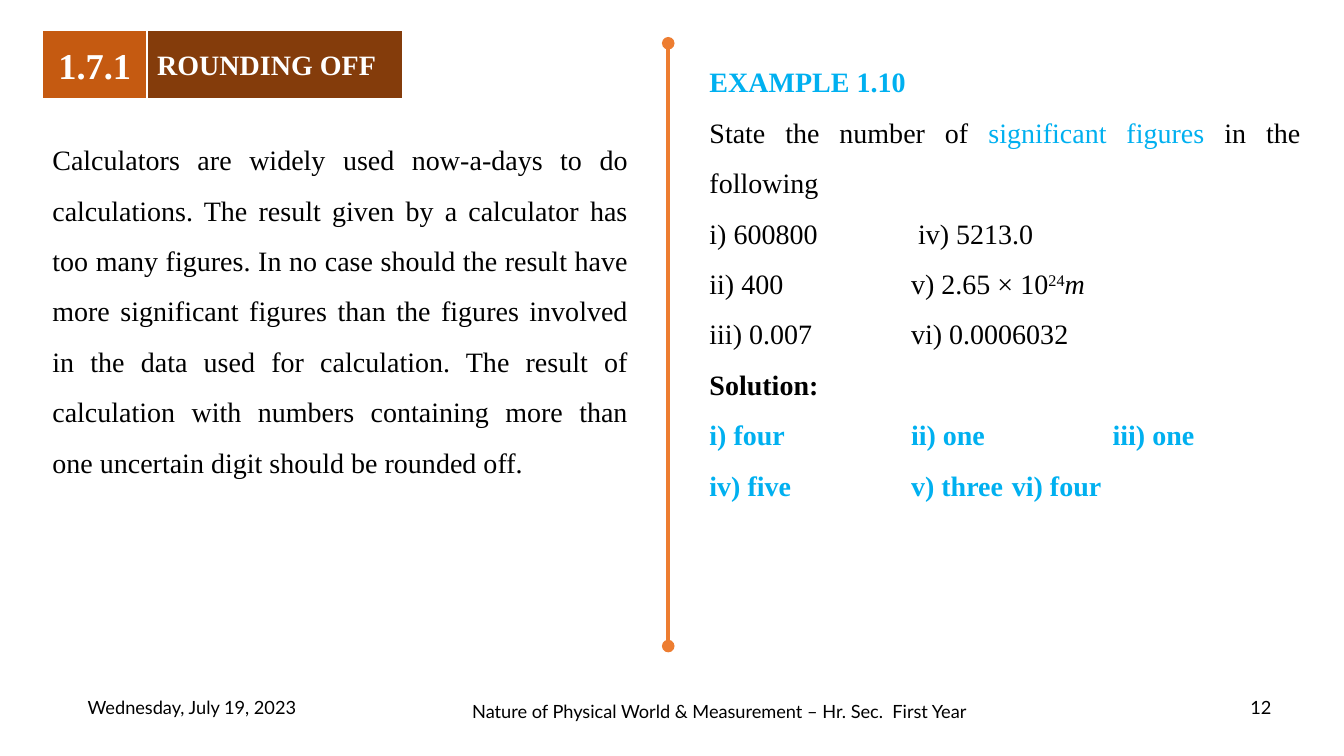
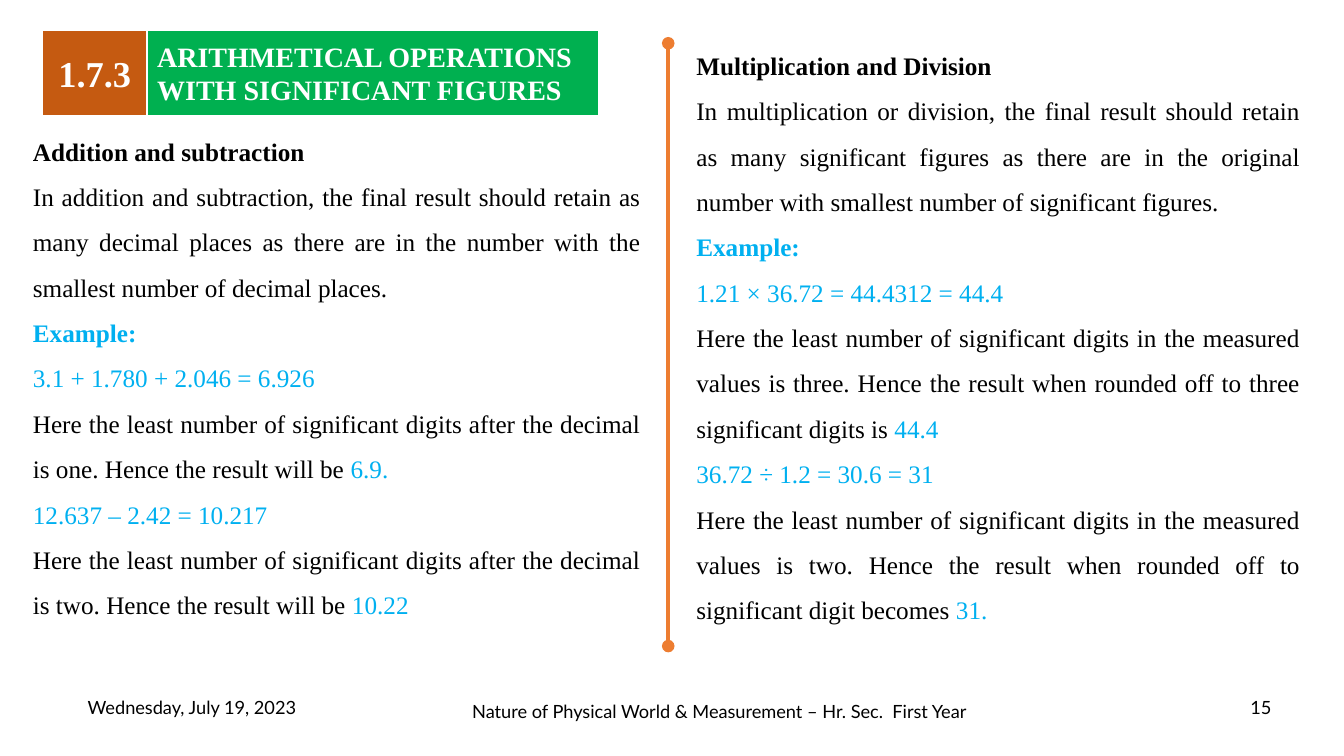
from lxml.etree import SubElement
from pptx import Presentation
from pptx.dml.color import RGBColor
from pptx.enum.shapes import MSO_CONNECTOR, MSO_SHAPE
from pptx.enum.text import MSO_ANCHOR, MSO_AUTO_SIZE, PP_ALIGN
from pptx.oxml.ns import qn
from pptx.util import Cm, Pt

BLACK, WHITE, CYAN = "000000", "FFFFFF", "00B0F0"
ORANGE, RUST, BROWN, GREEN = "ED7D31", "C55A11", "843C0B", "00B050"
SERIF, SANS = "Times New Roman", "Lato"
PLAIN, BOLD, KEY = {}, {"bold": True}, {"color": CYAN}
KEY_BOLD = {"color": CYAN, "bold": True}
WIDE_TABS, CLOSE_TABS = (5.08, 10.16), (5.08, 7.62)

ROUNDING = [
    [("Calculators are widely used now-a-days to do calculations. The result given by a "
      "calculator has too many figures. In no case should the result have more significant "
      "figures than the figures involved in the data used for calculation. The result of "
      "calculation with numbers containing more than one uncertain digit should be "
      "rounded off.", PLAIN)],
]
EXAMPLE = [
    [("EXAMPLE 1.10", KEY_BOLD)],
    [("State the number of ", PLAIN), ("significant figures ", KEY),
     ("in the following", PLAIN)],
    [("i) 600800\t iv) 5213.0", PLAIN)],
    [("ii) 400\tv) 2.65 × 10", PLAIN), ("24", {"raised": 30}), ("m", {"italic": True})],
    [("iii) 0.007\tvi) 0.0006032", PLAIN)],
    [("Solution:", BOLD)],
    [("i) four\tii) one\tiii) one", KEY_BOLD)],
    [("iv) five\tv) three\tvi) four", {**KEY_BOLD, "tabs": CLOSE_TABS})],
]
ADDITION = [
    [("Addition and subtraction", BOLD)],
    [("In addition and subtraction, the final result should retain as many decimal places "
      "as there are in the number with the smallest number of decimal places.", PLAIN)],
    [("Example:", KEY_BOLD)],
    [("3.1 + 1.780 + 2.046 = 6.926", KEY)],
    [("Here the least number of significant digits after the decimal is one. Hence the "
      "result will be ", PLAIN), ("6.9.", KEY)],
    [("12.637 – 2.42 = 10.217", KEY)],
    [("Here the least number of significant digits after the decimal is two. Hence the "
      "result will be ", PLAIN), ("10.22", KEY)],
]
MULTIPLICATION = [
    [("Multiplication and Division", BOLD)],
    [("In multiplication or division, the final result should retain as many significant "
      "figures as there are in the original number with smallest number of significant "
      "figures.", PLAIN)],
    [("Example:", KEY_BOLD)],
    [("1.21 × 36.72 = 44.4312 = 44.4", KEY)],
    [("Here the least number of significant digits in the measured values is three. Hence "
      "the result when rounded off to three significant digits is ", PLAIN), ("44.4", KEY)],
    [("36.72 ÷ 1.2 = 30.6 = 31", KEY)],
    [("Here the least number of significant digits in the measured values is two. Hence "
      "the result when rounded off to significant digit becomes ", PLAIN), ("31.", KEY)],
]


def paint(target, color):
    if hasattr(target, "solid"):
        target.solid()
        target = target.fore_color
    target.rgb = RGBColor.from_string(color)


def write(para, text, font=SERIF, size=20, color=BLACK, bold=False, italic=False,
          raised=0, tabs=None):
    span = para.add_run()
    span.text = text
    span.font.name, span.font.size = font, Pt(size)
    span.font.bold, span.font.italic = bold, italic
    paint(span.font.color, color)
    if raised:
        span._r.get_or_add_rPr().set("baseline", str(raised * 1000))
    if "\t" in text:
        stops = SubElement(para._p.get_or_add_pPr(), qn("a:tabLst"))
        for stop in tabs or WIDE_TABS:
            SubElement(stops, qn("a:tab"), pos=str(Cm(stop)), algn="l")


def add_text_box(page, left, top, width, height):
    box = page.shapes.add_textbox(Cm(left), Cm(top), Cm(width), Cm(height))
    box.text_frame.word_wrap = True
    return box.text_frame


def add_footer(page, number):
    parts = [
        ("Wednesday, July 19, 2023", 1.8, 17.3, 6.07),
        (str(number), 31.24, 17.3, 1.07),
        ("Nature of Physical World & Measurement – Hr. Sec.  First Year", 11.56, 17.4, 13.13),
    ]
    for text, left, top, width in parts:
        frame = add_text_box(page, left, top, width, 1.02)
        frame.margin_left = frame.margin_right = 0
        frame.vertical_anchor = MSO_ANCHOR.MIDDLE
        para = frame.paragraphs[0]
        para.alignment = PP_ALIGN.CENTER
        write(para, text, font=SANS, size=13)


def add_divider(page, x, top, bottom):
    line = page.shapes.add_connector(MSO_CONNECTOR.STRAIGHT, Cm(x), Cm(top), Cm(x), Cm(bottom))
    paint(line.line.fill, ORANGE)
    line.line.width = Pt(3)
    outline = line.line._get_or_add_ln()
    for end in ("a:headEnd", "a:tailEnd"):
        SubElement(outline, qn(end), type="oval")
    SubElement(line._element.spPr, qn("a:effectLst"))


def add_band(page, left, top, width, height, text, fill, size, align):
    band = page.shapes.add_shape(MSO_SHAPE.RECTANGLE, Cm(left), Cm(top), Cm(width), Cm(height))
    band.shadow.inherit = False
    paint(band.fill, fill)
    paint(band.line.fill, WHITE)
    band.line.width = Pt(1.5)
    band.text_frame.word_wrap = True
    band.text_frame.vertical_anchor = MSO_ANCHOR.MIDDLE
    para = band.text_frame.paragraphs[0]
    para.alignment = align
    write(para, text, size=size, color=WHITE, bold=True)


def add_heading(page, left, top, width, height, number, title, fill):
    badge = 2.64
    add_band(page, left, top, badge, height, number, RUST, 26, PP_ALIGN.CENTER)
    add_band(page, left + badge, top, width - badge, height, title, fill, 20, PP_ALIGN.LEFT)


def add_column(page, box, paragraphs, size):
    frame = add_text_box(page, *box)
    frame.auto_size = MSO_AUTO_SIZE.SHAPE_TO_FIT_TEXT
    for index, spans in enumerate(paragraphs):
        para = frame.add_paragraph() if index else frame.paragraphs[0]
        para.alignment = PP_ALIGN.JUSTIFY
        para.line_spacing = 1.5
        for text, look in spans:
            write(para, text, size=size, **look)


def add_lesson(deck, page_number, heading_size, heading, size, columns):
    page = deck.slides.add_slide(deck.slide_layouts[6])
    add_footer(page, page_number)
    add_divider(page, 16.84, 1.09, 16.28)
    add_heading(page, 1.07, 0.76, *heading_size, *heading)
    for box, paragraphs in columns:
        add_column(page, box, paragraphs, size)


def main():
    deck = Presentation()
    deck.slide_width, deck.slide_height = Cm(33.87), Cm(19.05)
    add_lesson(deck, 12, (9.09, 1.73), ("1.7.1", "ROUNDING OFF", BROWN), 20, [
        ((1.07, 3.05, 15.01, 10.39), ROUNDING),
        ((17.63, 1.09, 15.39, 11.79), EXAMPLE),
    ])
    add_lesson(deck, 15, (14.02, 2.16),
               ("1.7.3", "ARITHMETICAL OPERATIONS WITH SIGNIFICANT FIGURES", GREEN), 18, [
        ((0.58, 2.92, 15.82, 12.95), ADDITION),
        ((17.3, 0.76, 15.72, 16.41), MULTIPLICATION),
    ])
    deck.save("out.pptx")


if __name__ == "__main__":
    main()
